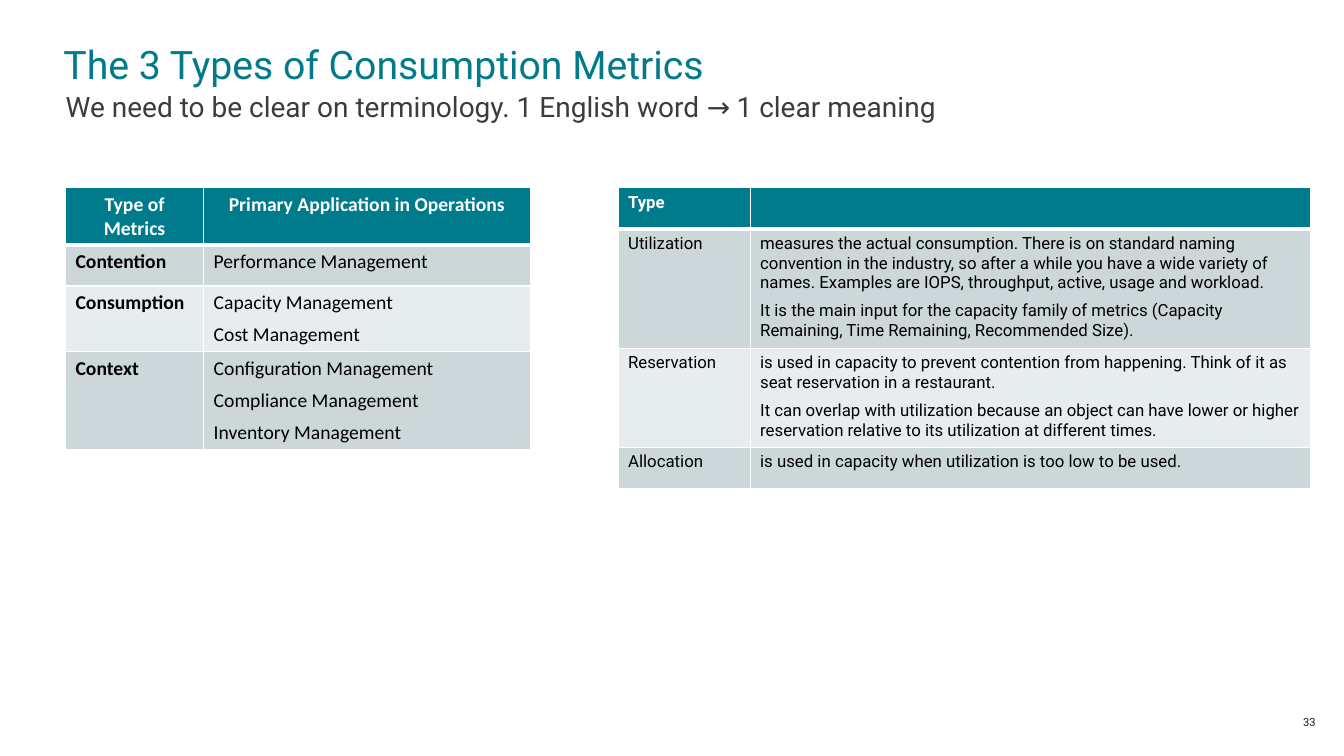
from dataclasses import dataclass

from lxml import etree
from pptx import Presentation
from pptx.dml.color import RGBColor
from pptx.enum.text import MSO_ANCHOR, PP_ALIGN
from pptx.oxml.ns import qn
from pptx.util import Inches, Pt

LEFT, CENTER, RIGHT = PP_ALIGN.LEFT, PP_ALIGN.CENTER, PP_ALIGN.RIGHT
TOP, MIDDLE, BOTTOM = MSO_ANCHOR.TOP, MSO_ANCHOR.MIDDLE, MSO_ANCHOR.BOTTOM
TEAL, WHITE, BLACK = "007B8C", "FFFFFF", "000001"
BANDS = ("CCD7DA", "E7ECEE")
ROW_HEIGHT = 0.41


@dataclass
class Label:
    text: str
    box: tuple[float, float, float, float]
    size: float
    color: str
    align: PP_ALIGN = LEFT
    anchor: MSO_ANCHOR = TOP
    line_spacing: float = 0.9


@dataclass
class MetricTable:
    left: float
    top: float
    widths: tuple[float, float]
    rows: list[tuple[str, str]]
    font: str
    size: float
    header_align: PP_ALIGN
    bold_types: bool
    before: float
    after: float


LABELS = [
    Label("The 3 Types of Consumption Metrics", (0.63, 0.45, 12.03, 0.42), 28, TEAL, anchor=BOTTOM),
    Label("We need to be clear on terminology. 1 English word → 1 clear meaning",
          (0.65, 0.89, 12.02, 0.27), 20, "3C3C3C", line_spacing=1.0),
    Label("33", (12.57, 7.07, 0.48, 0.2), 8, "1B1E35", RIGHT, MIDDLE),
]

TABLES = [
    MetricTable(6.13, 1.86, (1.31, 5.56), [
        ("Type", ""),
        ("Utilization",
         "measures the actual consumption. There is on standard naming convention in the industry, "
         "so after a while you have a wide variety of names. Examples are IOPS, throughput, active, "
         "usage and workload.\n"
         "It is the main input for the capacity family of metrics (Capacity Remaining, "
         "Time Remaining, Recommended Size)."),
        ("Reservation",
         "is used in capacity to prevent contention from happening. Think of it as seat reservation "
         "in a restaurant.\n"
         "It can overlap with utilization because an object can have lower or higher reservation "
         "relative to its utilization at different times."),
        ("Allocation", "is used in capacity when utilization is too low to be used."),
    ], "Roboto", 12, LEFT, False, 6, 0),
    MetricTable(0.65, 1.86, (1.37, 3.24), [
        ("Type of Metrics", "Primary Application in Operations"),
        ("Contention", "Performance Management"),
        ("Consumption", "Capacity Management\nCost Management"),
        ("Context", "Configuration Management\nCompliance Management\nInventory Management"),
    ], "Calibri", 14, CENTER, True, 3, 3),
]


def rgb(value: str) -> RGBColor:
    return RGBColor.from_string(value)


def style_font(font, name: str, size: float, color: str, bold: bool = False) -> None:
    font.name = name
    font.size = Pt(size)
    font.bold = bold
    font.color.rgb = rgb(color)


def add_label(slide, label: Label) -> None:
    frame = slide.shapes.add_textbox(*map(Inches, label.box)).text_frame
    frame.margin_left = frame.margin_right = frame.margin_top = frame.margin_bottom = 0
    frame.word_wrap = True
    frame.vertical_anchor = label.anchor
    frame.text = label.text
    paragraph = frame.paragraphs[0]
    paragraph.alignment = label.align
    paragraph.line_spacing = label.line_spacing
    style_font(paragraph.runs[0].font, "Roboto", label.size, label.color)


def add_borders(cell, widths: dict[str, float]) -> None:
    properties = cell._tc.get_or_add_tcPr()
    for index, (side, width) in enumerate(widths.items()):
        line = etree.Element(qn(f"a:ln{side}"), w=str(Pt(width)))
        fill = etree.SubElement(line, qn("a:solidFill"))
        etree.SubElement(fill, qn("a:srgbClr"), val=WHITE)
        properties.insert(index, line)


def add_metric_table(slide, spec_table: MetricTable) -> None:
    row_count = len(spec_table.rows)
    table = slide.shapes.add_table(
        row_count, 2, Inches(spec_table.left), Inches(spec_table.top),
        Inches(sum(spec_table.widths)), Inches(ROW_HEIGHT * row_count)).table
    for column, width in zip(table.columns, spec_table.widths):
        column.width = Inches(width)
    for row_index, texts in enumerate(spec_table.rows):
        table.rows[row_index].height = Inches(ROW_HEIGHT)
        header = row_index == 0
        for column_index, text in enumerate(texts):
            cell = table.cell(row_index, column_index)
            cell.fill.solid()
            cell.fill.fore_color.rgb = rgb(TEAL if header else BANDS[(row_index - 1) % 2])
            top = 3 if row_index == 1 else 1
            add_borders(cell, {"L": 1, "R": 1, "T": top, "B": 3 if header else 1})
            cell.text_frame.text = text
            bold = header or (spec_table.bold_types and column_index == 0)
            for number, paragraph in enumerate(cell.text_frame.paragraphs):
                paragraph.alignment = spec_table.header_align if header else LEFT
                paragraph.space_after = Pt(spec_table.after)
                if number:
                    paragraph.space_before = Pt(spec_table.before)
                for run in paragraph.runs:
                    style_font(run.font, spec_table.font, spec_table.size,
                               WHITE if header else BLACK, bold)


def main() -> None:
    presentation = Presentation()
    presentation.slide_width = Inches(13.33)
    presentation.slide_height = Inches(7.5)
    slide = presentation.slides.add_slide(presentation.slide_layouts[6])
    for label in LABELS:
        add_label(slide, label)
    for metric_table in TABLES:
        add_metric_table(slide, metric_table)
    presentation.save("out.pptx")


if __name__ == "__main__":
    main()
